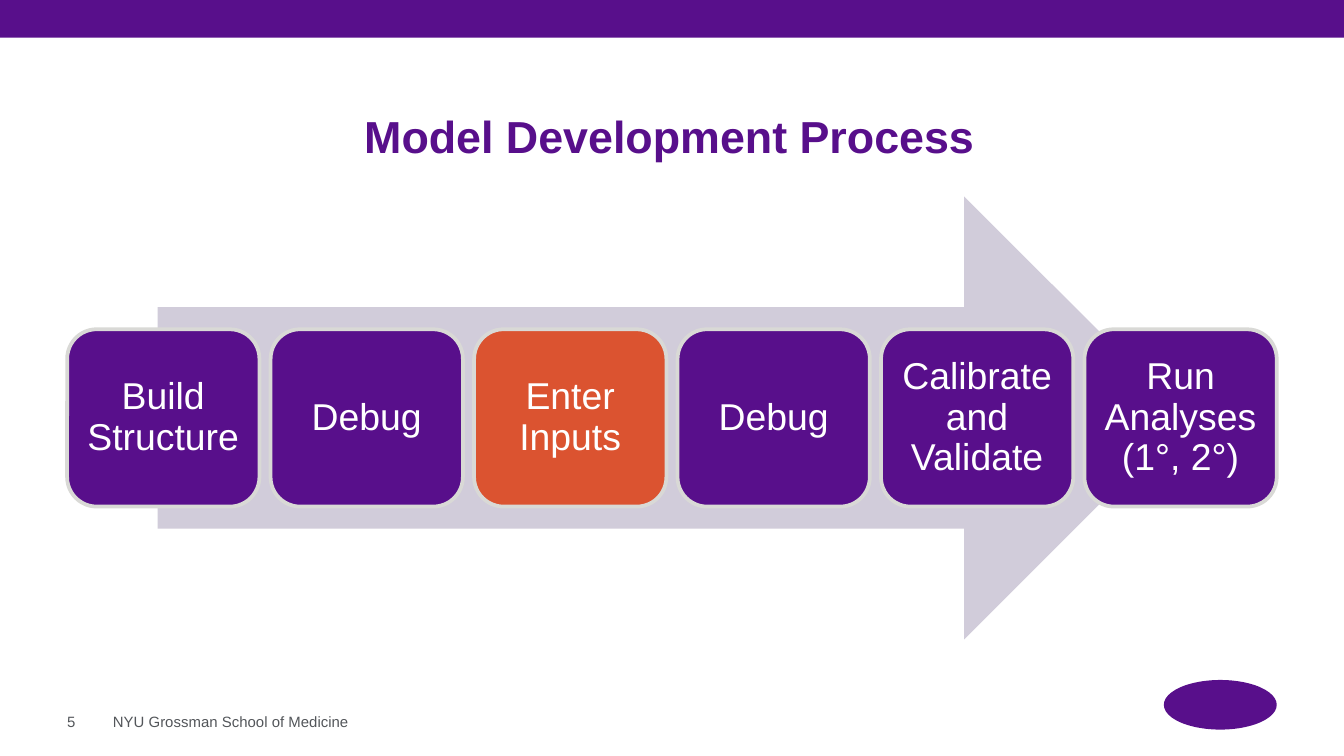
"""Build the Model Development Process slide."""
from pptx import Presentation
from pptx import util as u
from pptx.dml import color
from pptx.enum import shapes, text

COLORS = {
    "purple": "580F8B",
    "orange": "DB5330",
    "lavender": "D1CCDA",
    "border": "D9D9D6",
    "gray": "53565A",
    "white": "FFFFFF",
}


def add_shape(kind, left, top, width, height, fill):
    shape = page.shapes.add_shape(kind, u.Pt(left), u.Pt(top), u.Pt(width), u.Pt(height))
    shape.shadow.inherit = False
    shape.fill.solid()
    shape.fill.fore_color.rgb = color.RGBColor.from_string(COLORS[fill])
    shape.line.fill.background()
    return shape


def write(box, words, size, ink, bold=False, align="LEFT", anchor="MIDDLE", spacing=1.0, inset=0):
    frame = box.text_frame
    frame.word_wrap = True
    frame.vertical_anchor = text.MSO_ANCHOR[anchor]
    frame.margin_left = frame.margin_right = u.Pt(inset)
    frame.margin_top = frame.margin_bottom = u.Pt(inset)
    para = frame.paragraphs[0]
    para.alignment = text.PP_ALIGN[align]
    para.line_spacing = spacing
    span = para.add_run()
    span.text = words
    span.font.name = "Arial"
    span.font.size = u.Pt(size)
    span.font.bold = bold
    span.font.color.rgb = color.RGBColor.from_string(COLORS[ink])


deck = Presentation()
deck.slide_width, deck.slide_height = u.Pt(720), u.Pt(405)
page = deck.slides.add_slide(deck.slide_layouts[6])
kinds = shapes.MSO_SHAPE

add_shape(kinds.RECTANGLE, 0, 0, 720, 20.2, "purple")
add_shape(kinds.OVAL, 623.5, 364.3, 60.5, 26.6, "purple")

labels = [
    ("Model Development Process", 195.1, 62.6, 329.8, 24.5,
     dict(size=24, ink="purple", bold=True, anchor="BOTTOM", spacing=0.85)),
    ("NYU Grossman School of Medicine", 60.5, 381.6, 266.4, 9.4, dict(size=8, ink="gray")),
    ("5", 36, 381.6, 20.2, 9.4, dict(size=8, ink="gray")),
]
for words, left, top, width, height, style in labels:
    box = page.shapes.add_textbox(u.Pt(left), u.Pt(top), u.Pt(width), u.Pt(height))
    write(box, words, **style)

add_shape(kinds.RIGHT_ARROW, 84.4, 105.2, 550.8, 237.4, "lavender")

steps = ["Build Structure", "Debug", "Enter Inputs", "Debug",
         "Calibrate and Validate", "Run Analyses (1°, 2°)"]
STEP_LEFT, STEP_PITCH = 36, 109
for index, step in enumerate(steps):
    fill = "orange" if step == "Enter Inputs" else "purple"
    box = add_shape(kinds.ROUNDED_RECTANGLE, STEP_LEFT + index * STEP_PITCH, 176.4, 103, 95, fill)
    box.line.color.rgb = color.RGBColor.from_string(COLORS["border"])
    box.line.width = u.Pt(2)
    write(box, step, size=20, ink="white", align="CENTER", spacing=0.9, inset=5)

deck.save("out.pptx")
